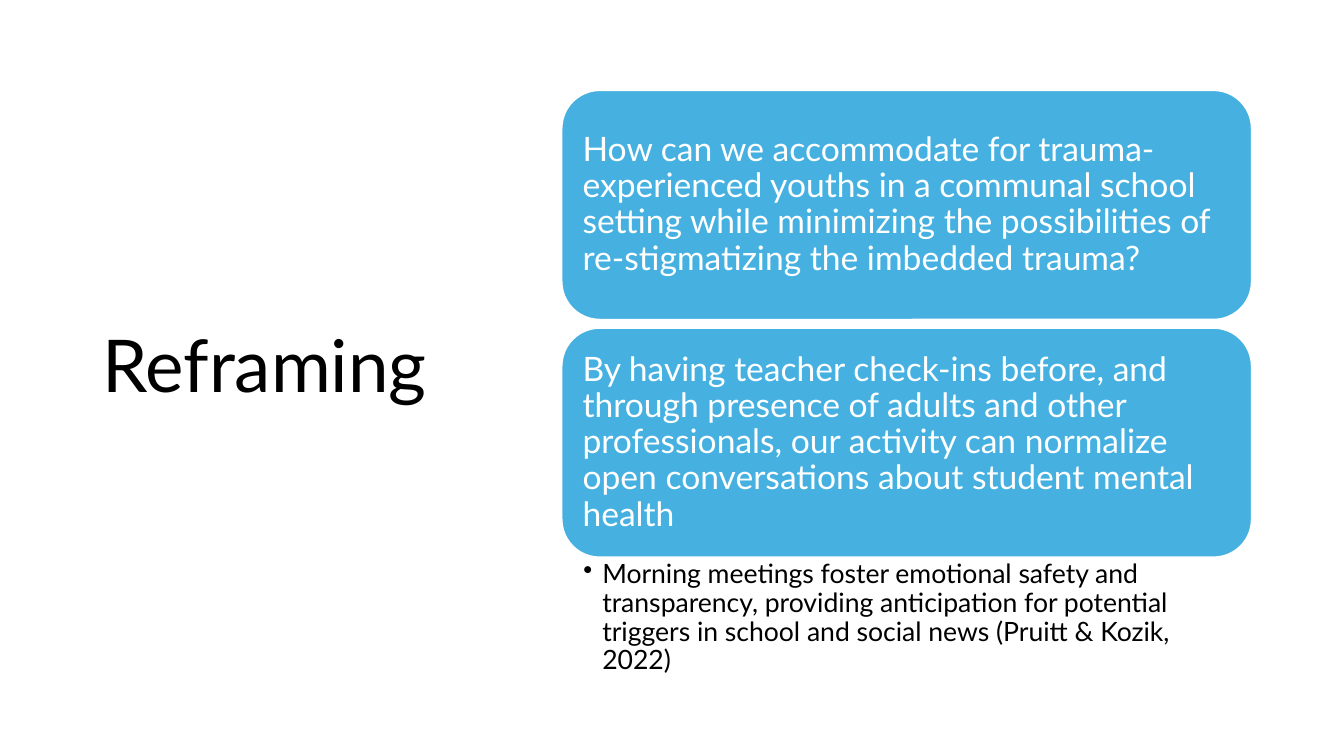
from lxml.etree import SubElement
from pptx import Presentation
from pptx.dml.color import RGBColor
from pptx.enum.shapes import MSO_SHAPE
from pptx.enum.text import MSO_ANCHOR, PP_ALIGN
from pptx.oxml.ns import qn
from pptx.util import Cm, Pt


def color(value):
    return RGBColor.from_string(value)


class SlideBuilder:
    font_name = "Lato"
    black = "000000"
    white = "FFFFFF"
    blue = "46B1E1"

    def __init__(self, slide):
        self.slide = slide

    def set_text(self, shape, text, size, ink, anchor, insets, bullet_indent=None):
        frame = shape.text_frame
        frame.word_wrap = True
        frame.vertical_anchor = anchor
        frame.margin_left, frame.margin_top, frame.margin_right, frame.margin_bottom = map(Cm, insets)
        paragraph = frame.paragraphs[0]
        paragraph.text = text
        paragraph.alignment = PP_ALIGN.LEFT
        paragraph.line_spacing = 0.9
        if bullet_indent is not None:
            properties = paragraph._p.get_or_add_pPr()
            properties.set("marL", str(Cm(bullet_indent)))
            properties.set("indent", str(-Cm(bullet_indent)))
            SubElement(properties, qn("a:buChar"), char="•")
        paragraph.font.name = self.font_name
        paragraph.font.size = Pt(size)
        paragraph.font.color.rgb = color(ink)

    def text_box(self, box, text, size, anchor, insets, bullet_indent=None):
        shape = self.slide.shapes.add_textbox(*map(Cm, box))
        self.set_text(shape, text, size, self.black, anchor, insets, bullet_indent)

    def title(self, box, text):
        self.text_box(box, text, 52, MSO_ANCHOR.MIDDLE, (0.25, 0.13, 0.25, 0.13))

    def bullet(self, box, text):
        self.text_box(box, text, 19, MSO_ANCHOR.TOP, (0.55, 0.08, 0.48, 0.08), 0.48)

    def card(self, box, text):
        shape = self.slide.shapes.add_shape(MSO_SHAPE.ROUNDED_RECTANGLE, *map(Cm, box))
        shape.shadow.inherit = False
        shape.fill.solid()
        shape.fill.fore_color.rgb = color(self.blue)
        shape.line.color.rgb = color(self.white)
        shape.line.width = Pt(1.5)
        self.set_text(shape, text, 24, self.white, MSO_ANCHOR.MIDDLE, (0.25,) * 4)


def main():
    presentation = Presentation()
    presentation.slide_width = Cm(33.87)
    presentation.slide_height = Cm(19.05)
    builder = SlideBuilder(presentation.slides.add_slide(presentation.slide_layouts[6]))

    builder.title((2.33, 1.55, 9.37, 15.47), "Reframing")

    left, top, width, height, gap = 14.15, 2.27, 17.4, 5.79, 0.2
    statements = [
        "How can we accommodate for trauma-experienced youths in a communal school setting "
        "while minimizing the possibilities of re-stigmatizing the imbedded trauma?",
        "By having teacher check-ins before, and through presence of adults and other "
        "professionals, our activity can normalize open conversations about student mental health",
    ]
    for index, statement in enumerate(statements):
        builder.card((left, top + index * (height + gap), width, height), statement)

    cards_bottom = top + len(statements) * (height + gap) - gap
    builder.bullet(
        (left, cards_bottom, width, 2.41),
        "Morning meetings foster emotional safety and transparency, providing anticipation "
        "for potential triggers in school and social news (Pruitt & Kozik, 2022)",
    )

    presentation.save("out.pptx")


if __name__ == "__main__":
    main()
